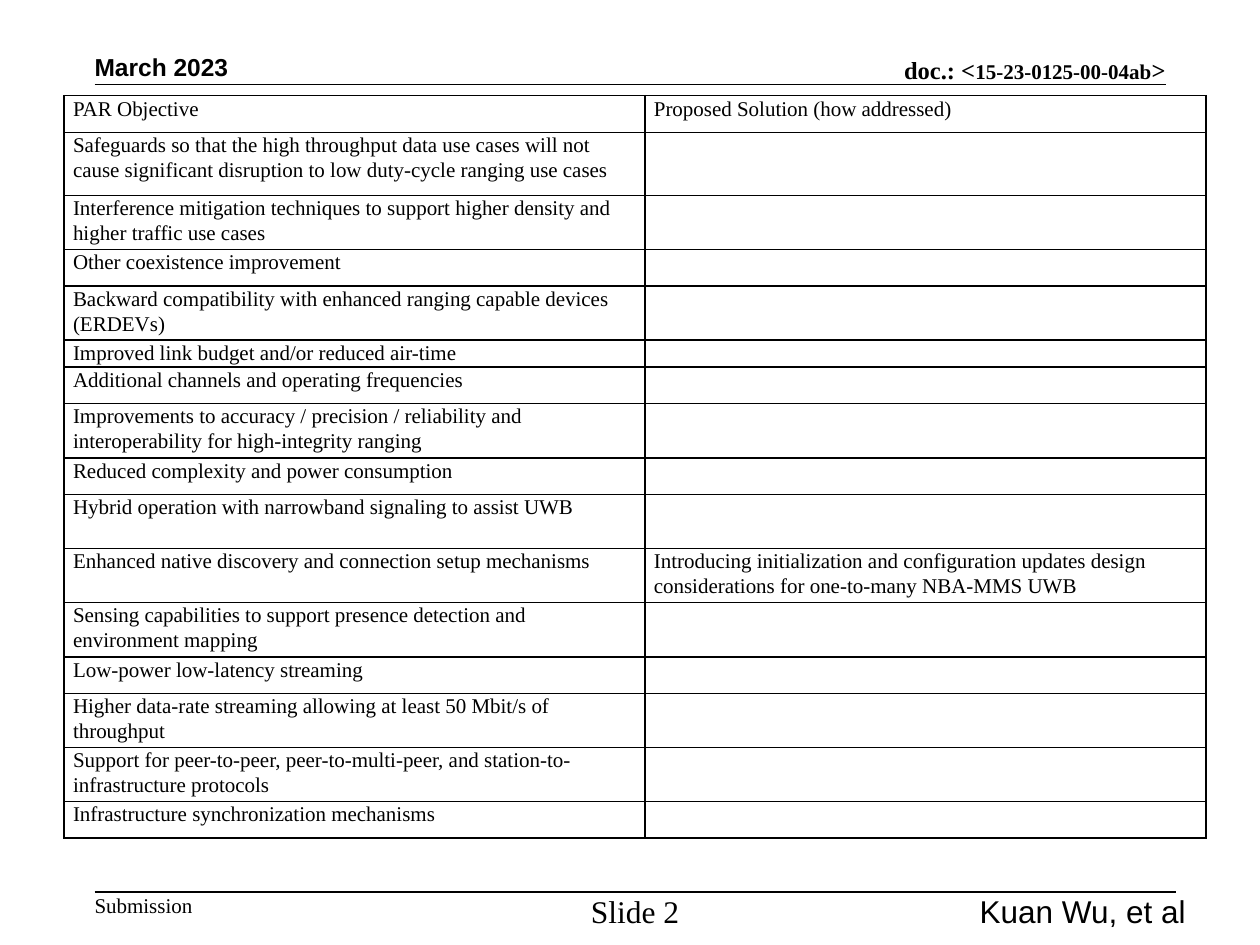
from dataclasses import dataclass

from lxml import etree
from pptx import Presentation
from pptx.dml.color import RGBColor
from pptx.enum.shapes import MSO_CONNECTOR
from pptx.enum.text import MSO_ANCHOR, PP_ALIGN
from pptx.oxml.ns import qn
from pptx.util import Inches, Pt

LEFT, CENTER, RIGHT = PP_ALIGN.LEFT, PP_ALIGN.CENTER, PP_ALIGN.RIGHT
TOP, BOTTOM = MSO_ANCHOR.TOP, MSO_ANCHOR.BOTTOM
STRAIGHT = MSO_CONNECTOR.STRAIGHT


@dataclass(frozen=True)
class Theme:
    ink: RGBColor = RGBColor(0, 0, 0)
    serif: str = "Times New Roman"
    sans: str = "Arial"
    small: Pt = Pt(12)
    medium: Pt = Pt(14)
    large: Pt = Pt(18)
    rule: Pt = Pt(1)


THEME = Theme()

SHORT, DOUBLE = 0.29, 0.43
ADDRESSED = ("Introducing initialization and configuration updates design "
             "considerations for one-to-many NBA-MMS UWB")
OBJECTIVES = [  # row height, objective, proposed solution
    (SHORT, "PAR Objective", "Proposed Solution (how addressed)"),
    (0.5, "Safeguards so that the high throughput data use cases will not cause "
          "significant disruption to low duty-cycle ranging use cases", ""),
    (DOUBLE, "Interference mitigation techniques to support higher density and "
             "higher traffic use cases", ""),
    (SHORT, "Other coexistence improvement", ""),
    (DOUBLE, "Backward compatibility with enhanced ranging capable devices (ERDEVs)", ""),
    (0.2, "Improved link budget and/or reduced air-time", ""),
    (SHORT, "Additional channels and operating frequencies", ""),
    (DOUBLE, "Improvements to accuracy / precision / reliability and "
             "interoperability for high-integrity ranging", ""),
    (SHORT, "Reduced complexity and power consumption", ""),
    (DOUBLE, "Hybrid operation with narrowband signaling to assist UWB", ""),
    (DOUBLE, "Enhanced native discovery and connection setup mechanisms", ADDRESSED),
    (DOUBLE, "Sensing capabilities to support presence detection and "
             "environment mapping", ""),
    (SHORT, "Low-power low-latency streaming", ""),
    (DOUBLE, "Higher data-rate streaming allowing at least 50 Mbit/s of throughput", ""),
    (DOUBLE, "Support for peer-to-peer, peer-to-multi-peer, and "
             "station-to-infrastructure protocols", ""),
    (SHORT, "Infrastructure synchronization mechanisms", ""),
]


def style_font(para, size, name=THEME.serif, bold=False):
    font = para.font
    font.size, font.name, font.bold = size, name, bold
    font.color.rgb = THEME.ink


def add_label(page, box, text, size, name=THEME.serif, bold=False,
              align=LEFT, anchor=TOP):
    """Add a one-line text box without margins and return its paragraph."""
    frame = page.shapes.add_textbox(*map(Inches, box)).text_frame
    frame.margin_left = frame.margin_top = frame.margin_right = frame.margin_bottom = 0
    frame.word_wrap = True
    frame.vertical_anchor = anchor
    para = frame.paragraphs[0]
    para.text, para.alignment = text, align
    style_font(para, size, name, bold)
    return para


def add_rule(page, left, right, y):
    rule = page.shapes.add_connector(
        STRAIGHT, Inches(left), Inches(y), Inches(right), Inches(y))
    rule.line.color.rgb = THEME.ink
    rule.line.width = THEME.rule
    etree.SubElement(rule._element.spPr, qn("a:effectLst"))


def add_header(page, left, top, width, height):
    bottom = top + height
    add_label(page, (left, top, 1.75, 0.24), "March 2023", THEME.medium,
              THEME.sans, bold=True, anchor=BOTTOM)
    number_width = 5.82
    para = add_label(
        page, (left + width - number_width, bottom - 0.24, number_width, 0.24),
        "", THEME.medium, bold=True, align=RIGHT, anchor=BOTTOM)
    for text, size in (("doc.: <", THEME.medium), ("15-23-0125-00-04ab", THEME.small),
                       (">", THEME.medium)):
        span = para.add_run()
        span.text, span.font.size = text, size
    add_rule(page, left, left + width, bottom)


def add_footer(page, left, top, width, height):
    middle = left + width / 2
    number_width, author_width = 0.9, 3.94
    add_rule(page, left, left + width, top)
    add_label(page, (left, top, 0.78, height), "Submission", THEME.small)
    add_label(page, (middle - number_width / 2, top, number_width, height),
              "Slide 2", THEME.large, align=CENTER)
    add_label(page, (left + width + 0.08 - author_width, top, author_width, height),
              "Kuan Wu, et al", THEME.large, THEME.sans, align=RIGHT)


def outline_cell(cell):
    properties = cell._tc.get_or_add_tcPr()
    for position, side in enumerate(("lnL", "lnR", "lnT", "lnB")):
        border = etree.Element(qn(f"a:{side}"), w=str(int(THEME.rule)))
        fill = etree.SubElement(border, qn("a:solidFill"))
        etree.SubElement(fill, qn("a:srgbClr"), val=str(THEME.ink))
        properties.insert(position, border)


def fill_cell(cell, text):
    cell.margin_left = cell.margin_right = Inches(0.07)
    cell.margin_top = cell.margin_bottom = 0
    cell.fill.background()
    outline_cell(cell)
    para = cell.text_frame.paragraphs[0]
    para.line_spacing, para.space_after = 1.07, Pt(8)
    style_font(para, THEME.small)
    if text:
        para.text = text
    else:  # keeps an empty cell from growing its row
        etree.SubElement(para._p, qn("a:endParaRPr"), sz=str(int(THEME.small.pt * 100)))


def add_objectives(page, left, top, column_widths):
    height = sum(row[0] for row in OBJECTIVES)
    table = page.shapes.add_table(
        len(OBJECTIVES), len(column_widths), Inches(left), Inches(top),
        Inches(sum(column_widths)), Inches(height)).table
    table.first_row = table.horz_banding = False
    for column, width in zip(table.columns, column_widths):
        column.width = Inches(width)
    for row, (row_height, *texts) in zip(table.rows, OBJECTIVES):
        row.height = Inches(row_height)
        for cell, text in zip(row.cells, texts):
            fill_cell(cell, text)


def main():
    deck = Presentation()
    deck.slide_width, deck.slide_height = Inches(10), Inches(7.5)
    page = deck.slides.add_slide(deck.slide_layouts[6])
    add_header(page, 0.75, 0.41, 8.5, 0.26)
    add_objectives(page, 0.51, 0.76, (4.61, 4.45))
    add_footer(page, 0.75, 7.08, 8.58, 0.2)
    deck.save("out.pptx")


if __name__ == "__main__":
    main()
